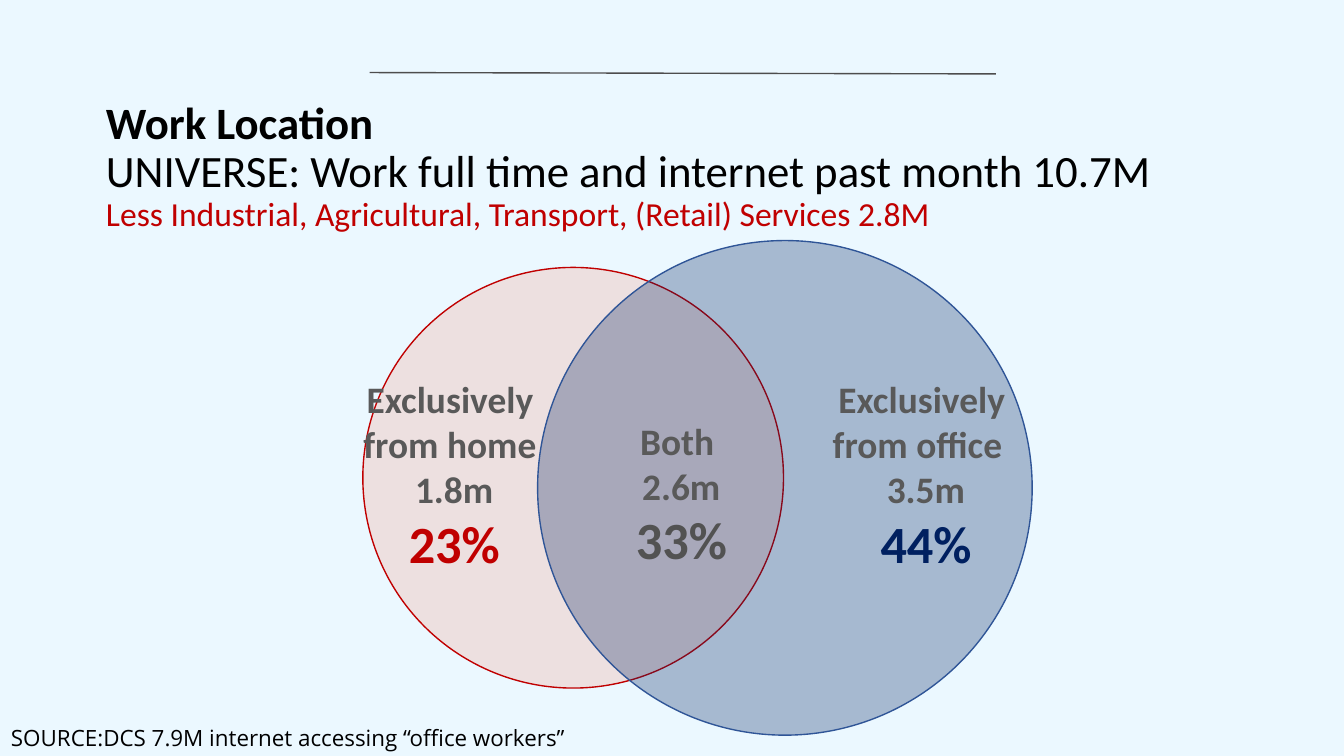
import pptx
import pptx.util
import pptx.dml.color
import pptx.enum.shapes
import pptx.enum.text
import pptx.oxml.ns
from lxml import etree

Inches = pptx.util.Inches
GREY = "595959"
RED = "C00000"
NAVY = "002060"
BLACK = "000000"


def color(value):
    return pptx.dml.color.RGBColor.from_string(value)


def add_text_box(slide, box, insets, lines, centered=True, line_spacing=None):
    shape = slide.shapes.add_textbox(*map(Inches, box))
    frame = shape.text_frame
    frame.word_wrap = True
    horizontal, vertical = map(Inches, insets)
    frame.margin_left = frame.margin_right = horizontal
    frame.margin_top = frame.margin_bottom = vertical
    for index, (text, size, font, hex_color, bold) in enumerate(lines):
        paragraph = frame.add_paragraph() if index else frame.paragraphs[0]
        if centered:
            paragraph.alignment = pptx.enum.text.PP_ALIGN.CENTER
        if line_spacing:
            paragraph.line_spacing = line_spacing
        run = paragraph.add_run()
        run.text = text
        run.font.size = pptx.util.Pt(size)
        run.font.name = font
        run.font.bold = bold
        run.font.color.rgb = color(hex_color)


def add_rule(slide, start, end):
    connector = slide.shapes.add_connector(
        pptx.enum.shapes.MSO_CONNECTOR.STRAIGHT, *map(Inches, start + end)
    )
    connector.line.color.rgb = color("4D4D4D")
    connector.line.width = pptx.util.Pt(0.75)
    etree.SubElement(connector._element.spPr, pptx.oxml.ns.qn("a:effectLst"))


def add_heading(slide, box):
    lines = [
        ("Work Location", 24, "Calibri", BLACK, True),
        ("UNIVERSE: Work full time and internet past month 10.7M", 24, "Calibri", BLACK, False),
        ("Less Industrial, Agricultural, Transport, (Retail) Services 2.8M", 18, "Calibri", RED, False),
    ]
    add_text_box(slide, box, (0.1, 0.05), lines, centered=False, line_spacing=0.9)


def add_circle(slide, left, top, diameter, fill, opacity, outline):
    shape = slide.shapes.add_shape(
        pptx.enum.shapes.MSO_SHAPE.OVAL, *map(Inches, (left, top, diameter, diameter))
    )
    shape.shadow.inherit = False
    shape.fill.solid()
    shape.fill.fore_color.rgb = color(fill)
    fill_color = shape._element.spPr.find(".//" + pptx.oxml.ns.qn("a:srgbClr"))
    alpha = etree.SubElement(fill_color, pptx.oxml.ns.qn("a:alpha"))
    alpha.set("val", str(opacity * 1000))
    shape.line.color.rgb = color(outline)
    shape.line.width = pptx.util.Pt(0.75)


def add_venn(slide, left, top):
    add_circle(slide, left, top + 0.2, 3.13, "FF3300", 12, RED)
    add_circle(slide, left + 1.3, top, 3.68, NAVY, 29, "2F5597")
    labels = [
        (-0.97, 0.88, 2.05, ["Exclusively ", "from home ", "1.8m"], "23%", RED),
        (0.72, 1.19, 1.75, ["Both ", "2.6m"], "33%", "525252"),
        (2.54, 0.88, 2.05, ["Exclusively ", "from office  ", "3.5m"], "44%", NAVY),
    ]
    for offset_x, offset_y, height, captions, share, share_color in labels:
        lines = [(caption, 20, "Calibri", GREY, True) for caption in captions]
        lines.append((share, 28, "Calibri", share_color, True))
        add_text_box(slide, (left + offset_x, top + offset_y, 3.3, height), (0.27, 0.13), lines)


def add_source(slide, box):
    text = "SOURCE:DCS 7.9M internet accessing “office workers”"
    add_text_box(slide, box, (0.27, 0.13), [(text, 12, "Open Sans", BLACK, False)])


def main():
    presentation = pptx.Presentation()
    presentation.slide_width = Inches(10)
    presentation.slide_height = Inches(10 * 9 / 16)
    slide = presentation.slides.add_slide(presentation.slide_layouts[6])
    slide.background.fill.solid()
    slide.background.fill.fore_color.rgb = color("EBF8FF")
    add_rule(slide, (2.75, 0.54), (7.41, 0.55))
    add_venn(slide, 2.7, 1.79)
    add_heading(slide, (0.69, 0.7, 8.62, 0.99))
    add_source(slide, (-0.67, 5.29, 5.63, 0.47))
    presentation.save("out.pptx")


if __name__ == "__main__":
    main()
